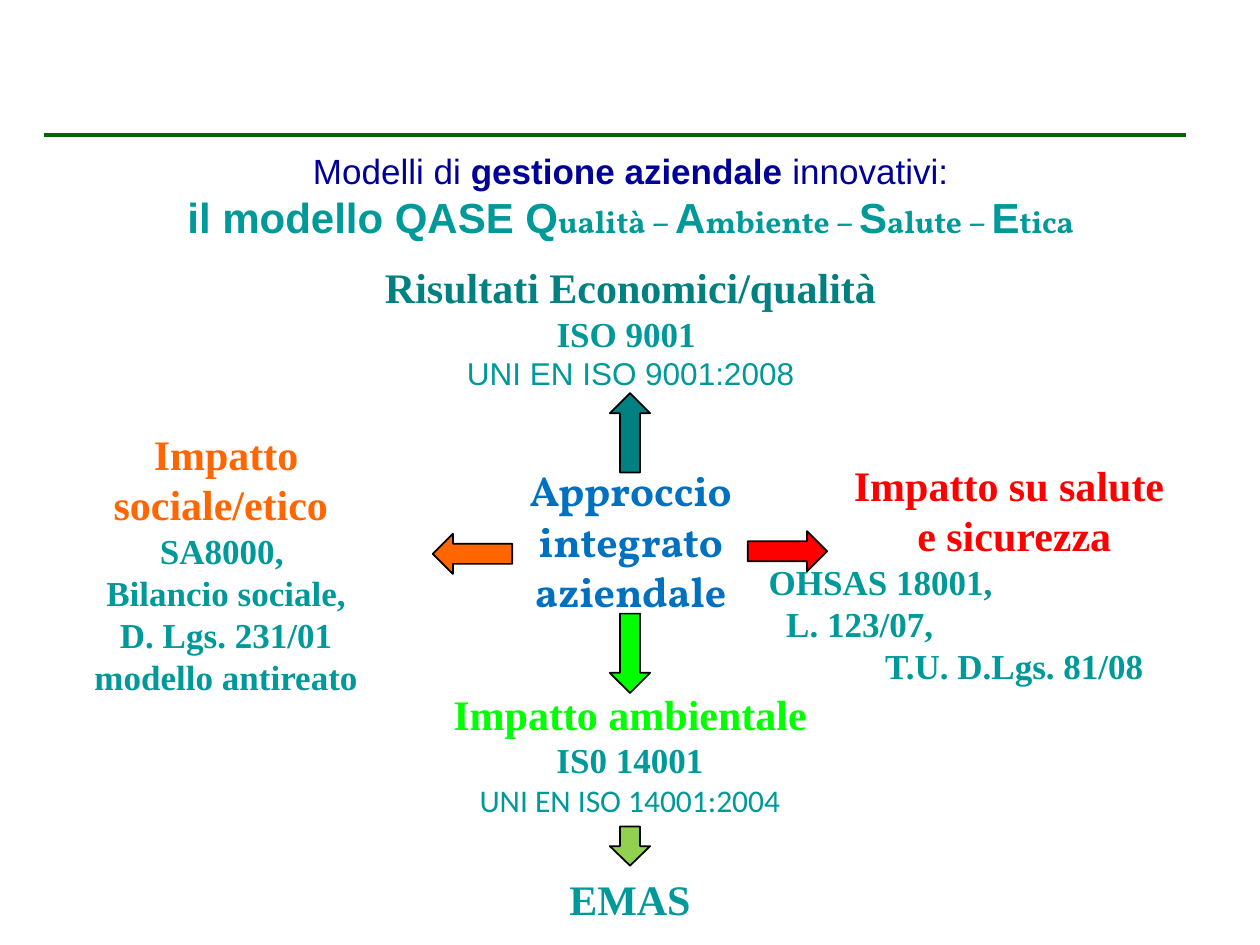
from lxml import etree
from pptx import Presentation
from pptx.dml.color import RGBColor
from pptx.enum.shapes import MSO_CONNECTOR, MSO_SHAPE
from pptx.enum.text import MSO_ANCHOR, PP_ALIGN
from pptx.oxml.ns import qn
from pptx.util import Inches, Pt

CENTER, LEFT = PP_ALIGN.CENTER, PP_ALIGN.LEFT
TOP, MIDDLE = MSO_ANCHOR.TOP, MSO_ANCHOR.MIDDLE
UP = MSO_SHAPE.UP_ARROW

BLACK = RGBColor(0x00, 0x00, 0x00)
FOREST = RGBColor(0x00, 0x66, 0x00)
NAVY = RGBColor(0x00, 0x00, 0x99)
AQUA = RGBColor(0x00, 0x99, 0x99)
TEAL = RGBColor(0x00, 0x80, 0x80)
BLUE = RGBColor(0x00, 0x70, 0xC0)
RED = RGBColor(0xFF, 0x00, 0x00)
ORANGE = RGBColor(0xFF, 0x66, 0x00)
GREEN = RGBColor(0x00, 0xFF, 0x00)
OLIVE = RGBColor(0x92, 0xD0, 0x50)
SERIF, SANS, BOOK = "Times New Roman", "Arial", "Vollkorn"

prs = Presentation()
prs.slide_width, prs.slide_height = Inches(10), Inches(7.5)
slide = prs.slides.add_slide(prs.slide_layouts[6])


def add_text(left, top, width, height, lines, anchor=TOP):
    """Each line is a list of runs: text, size, font, colour, bold."""
    box = slide.shapes.add_textbox(
        Inches(left), Inches(top), Inches(width), Inches(height))
    frame = box.text_frame
    frame.word_wrap = True
    frame.vertical_anchor = anchor
    for i, line in enumerate(lines):
        par = frame.add_paragraph() if i else frame.paragraphs[0]
        par.alignment = CENTER
        for text, size, face, color, bold in line:
            run = par.add_run()
            run.text = text
            run.font.size = Pt(size)
            run.font.name = face
            run.font.color.rgb = color
            run.font.bold = bold
    return frame


def head(text, color):
    return [(text, 24, SERIF, color, True)]


# Rule under the header area
rule = slide.shapes.add_connector(
    MSO_CONNECTOR.STRAIGHT, Inches(0.35), Inches(1.07), Inches(9.41), Inches(1.07))
rule.line.color.rgb = FOREST
rule.line.width = Pt(2)
etree.SubElement(rule.element.spPr, qn("a:effectLst"))

# Title: large initials, small word endings
intro = [(text, 20, SANS, NAVY, bold) for text, bold in (
    ("Modelli di ", False), ("gestione aziendale", True), (" innovativi:", False))]
model = []
for start, rest in (("il modello QASE Q", "ualità – "), ("A", "mbiente – "),
                    ("S", "alute – "), ("E", "tica")):
    model += [(start, 24, SANS, AQUA, True), (rest, 18, BOOK, AQUA, True)]
add_text(0.73, 1.14, 8.55, 0.95, [intro, model])

# Health and safety, right
laws = ["OHSAS 18001,", "L. 123/07,", "T.U. D.Lgs. 81/08"]
frame = add_text(
    6.1, 4.17, 3.9, 0.75,
    [head("Impatto su salute ", RED), head("e sicurezza", RED)]
    + [[(law, 20, SERIF, AQUA, True)] for law in laws], MIDDLE)
frame.margin_left = frame.margin_right = 0
for par, indent in zip(frame.paragraphs[2:4], (0, 0.14)):
    par.alignment = LEFT
    par._p.get_or_add_pPr().set("marL", str(Inches(indent)))

# Social impact, left
items = ["SA8000, ", "Bilancio sociale,", "D. Lgs. 231/01", "modello antireato"]
frame = add_text(
    0.31, 4.09, 2.97, 0.75,
    [head("Impatto sociale/etico ", ORANGE)]
    + [[(item, 20, SERIF, AQUA, True)] for item in items], MIDDLE)
frame.word_wrap = False

# Environment, below, and its next step
add_text(2.89, 5.47, 4.22, 1.02, [
    head("Impatto ambientale", GREEN),
    [("IS0 14001", 20, SERIF, AQUA, True)],
    [("UNI EN ISO 14001:2004", 18, "Calibri", AQUA, False)]], MIDDLE)
add_text(4.1, 6.88, 1.8, 0.51, [head("EMAS", AQUA)])

# Economic results, above
add_text(2.27, 2.03, 5.47, 1.15, [
    head("Risultati Economici/qualità", TEAL),
    [("ISO 9001 ", 20, SERIF, AQUA, True)],
    [("UNI EN ISO 9001:2008", 18, SANS, AQUA, False)]])

# Centre
add_text(4.06, 3.64, 1.89, 1.32,
         [[("Approccio integrato aziendale", 24, BOOK, BLUE, True)]])

# Arrows out of the centre, turned from pointing up
for left, top, height, turn, color in (
        (6.09, 4.06, 0.63, 90, RED), (4.84, 4.87, 0.63, 180, GREEN),
        (3.59, 4.08, 0.63, 270, ORANGE), (4.84, 3.12, 0.63, 0, TEAL),
        (4.84, 6.56, 0.31, 180, OLIVE)):
    arrow = slide.shapes.add_shape(
        UP, Inches(left), Inches(top), Inches(0.32), Inches(height))
    arrow.rotation = turn
    arrow.shadow.inherit = False
    arrow.fill.solid()
    arrow.fill.fore_color.rgb = color
    arrow.line.color.rgb = BLACK
    arrow.line.width = Pt(1)

prs.save("out.pptx")
